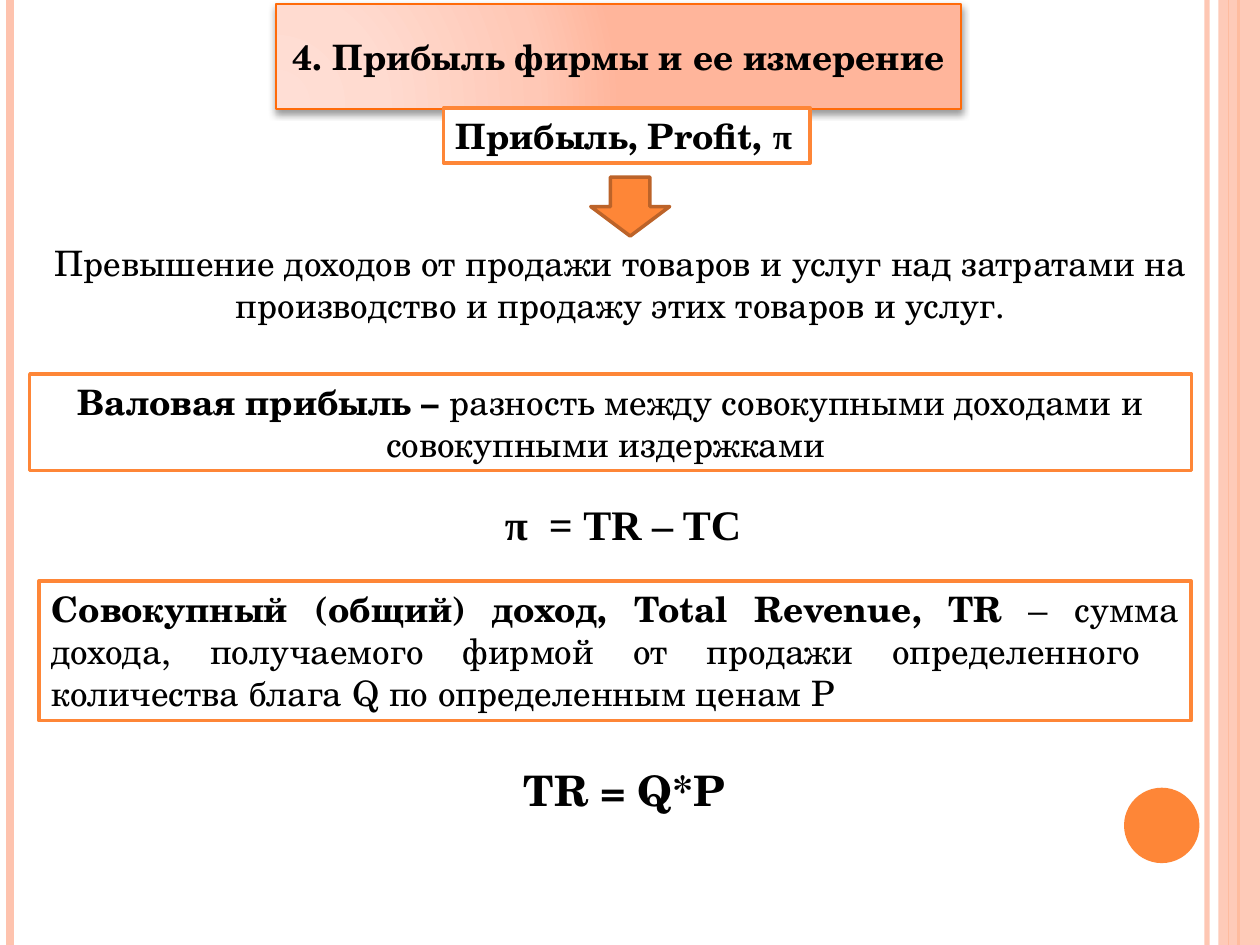
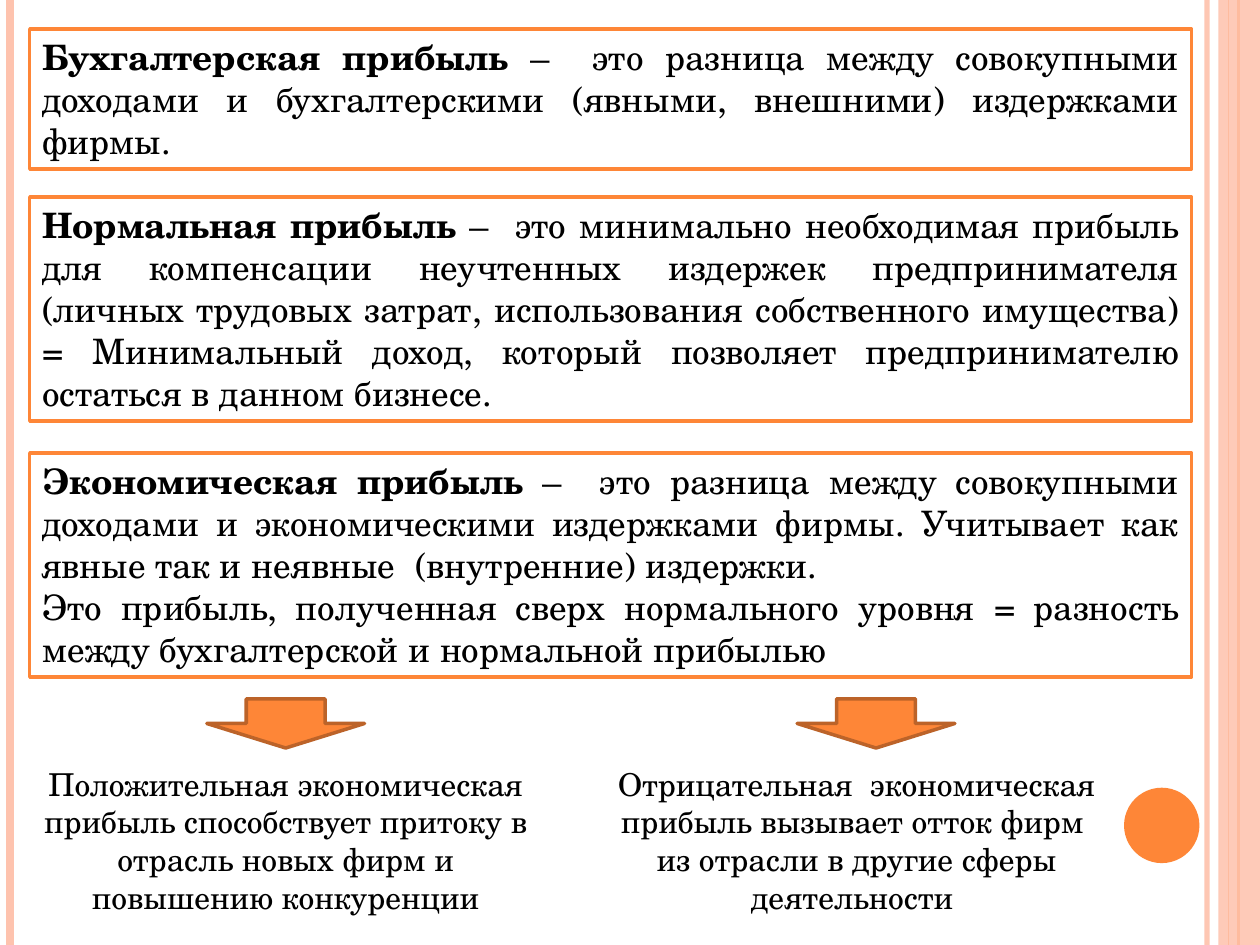
from pptx import Presentation
from pptx.dml.color import RGBColor
from pptx.enum.shapes import MSO_CONNECTOR as Link, MSO_SHAPE as Kind
from pptx.enum.text import MSO_ANCHOR as Anchor, MSO_AUTO_SIZE as Fit, PP_ALIGN as Align
from pptx.oxml import parse_xml
from pptx.oxml.ns import nsdecls, qn
from pptx.util import Cm, Pt

WIDE, HIGH = 25.4, 19.05
EDGE, SPAN = 0.6, 23.42
ORANGE, PINK, BROWN = "FE8637", "FEC3AE", "BC6329"
WHITE, BLACK, RIM = "FFFFFF", "000000", "FF6B0A"
SERIF, TIMES = "TeX Gyre Schola", "Times New Roman"
TITLE_ONLY, BLANK = 5, 6

# x, colour, width in points, opacity in percent
RULES = [
    (24.33, PINK, 3, 93),
    (0.2, PINK, 4.5, 100),
    (24.97, ORANGE, 1.5, 100),
    (24.77, ORANGE, 0.75, 100),
]
STOPS = [(0, "FFDED5"), (30, "FFDBD0"), (75, "FFC8B6"), (100, "FFB59B")]


def color(code):
    return RGBColor.from_string(code)


def paint(shape, fill, line=None, width=2):
    shape.fill.solid()
    shape.fill.fore_color.rgb = color(fill)
    if line:
        outline(shape, line, width)
    else:
        shape.line.fill.background()


def outline(shape, code, width):
    shape.line.color.rgb = color(code)
    shape.line.width = Pt(width)


def fade(shape, percent):
    """Make the first solid colour of a shape partly transparent."""
    tint = shape._element.spPr.find(".//" + qn("a:srgbClr"))
    tint.append(parse_xml(f'<a:alpha {nsdecls("a")} val="{percent * 1000}"/>'))


def form(slide, kind, place, fill, line=None):
    shape = slide.shapes.add_shape(kind, *map(Cm, place))
    shape.shadow.inherit = False
    paint(shape, fill, line)
    return shape


def rule(slide, x, code, width, opaque):
    line = slide.shapes.add_connector(Link.STRAIGHT, Cm(x), 0, Cm(x), Cm(HIGH))
    outline(line, code, width)
    if opaque < 100:
        fade(line, opaque)
    line._element.spPr.append(parse_xml(f'<a:effectLst {nsdecls("a")}/>'))


def frame(slide):
    """Draw the side bands and the disc that every slide has."""
    for item in RULES:
        rule(slide, *item)
    fade(form(slide, Kind.RECTANGLE, (24.56, 0, 0.84, HIGH), PINK), 87)
    form(slide, Kind.OVAL, (22.66, 15.88, 1.52, 1.52), ORANGE)


def write(shape, paras, align, size=20, wrap=True, anchor=Anchor.TOP):
    """Fill a shape with paragraphs, each a list of (text, bold[, font])."""
    body = shape.text_frame
    look = {"word_wrap": wrap, "auto_size": Fit.SHAPE_TO_FIT_TEXT, "vertical_anchor": anchor}
    for name, value in look.items():
        setattr(body, name, value)
    for i, runs in enumerate(paras):
        para = body.add_paragraph() if i else body.paragraphs[0]
        para.alignment = align
        for text, bold, *face in runs:
            run = para.add_run()
            run.text = text
            style = {"name": face[0] if face else SERIF, "size": Pt(size), "bold": bold}
            for name, value in style.items():
                setattr(run.font, name, value)
            run.font.color.rgb = color(BLACK)


def head(slide, text):
    title = slide.shapes.title
    spot = {"left": 5.56, "top": 0.59, "width": 13.82, "height": 1.11}
    for name, value in spot.items():
        setattr(title, name, Cm(value))
    stops = "".join(f'<a:gs pos="{at * 1000}"><a:srgbClr val="{code}"/></a:gs>' for at, code in STOPS)
    props = title._element.spPr
    props.append(parse_xml(
        f'<a:gradFill {nsdecls("a")} rotWithShape="1"><a:gsLst>{stops}</a:gsLst><a:path path="circle">'
        '<a:fillToRect l="5000" t="100000" r="120000" b="10000"/></a:path></a:gradFill>'))
    outline(title, RIM, 1)
    props.append(parse_xml(
        f'<a:effectLst {nsdecls("a")}><a:outerShdw blurRad="{Pt(4)}" dist="{Pt(2)}" dir="5400000" '
        f'rotWithShape="0"><a:srgbClr val="{BLACK}"><a:alpha val="40000"/></a:srgbClr>'
        '</a:outerShdw></a:effectLst>'))
    write(title, [[(text, True)]], Align.CENTER, wrap=False, anchor=Anchor.MIDDLE)


def box(slide, place, paras, align=Align.JUSTIFY, **look):
    write(form(slide, Kind.RECTANGLE, place, WHITE, ORANGE), paras, align, **look)


def note(slide, place, runs, align=Align.CENTER, **look):
    write(slide.shapes.add_textbox(*map(Cm, place)), [runs], align, **look)


def arrow(slide, *place):
    form(slide, Kind.DOWN_ARROW, place, ORANGE, BROWN)


def measure(slide):
    head(slide, "4. Прибыль фирмы и ее измерение")
    box(slide, (8.94, 2.18, 7.39, 1.11), [[("Прибыль, Profit, ", True), ("π", True, TIMES)]],
        Align.LEFT, wrap=False)
    arrow(slide, 11.91, 3.57, 1.59, 1.19)
    note(slide, (EDGE, 4.75, 23.82, 1.95), [(
        "Превышение доходов от продажи товаров и услуг над затратами на "
        "производство и продажу этих товаров и услуг.", False)])
    box(slide, (EDGE, 7.54, SPAN, 1.95), [[
        ("Валовая прибыль – ", True),
        ("разность между совокупными доходами и совокупными издержками ", False)]], Align.CENTER)
    note(slide, (9.93, 9.93, 5.51, 1.27), [("π  = TR – TC", True, TIMES)],
         Align.LEFT, size=24, wrap=False)
    box(slide, (0.79, 11.71, 23.22, 2.82), [[
        ("Совокупный (общий) доход, Total Revenue, TR ", True),
        ("– сумма дохода, получаемого фирмой от продажи определенного  "
         "количества блага Q по определенным ценам Р", False)]])
    note(slide, (10.31, 15.29, 4.62, 1.27), [("TR = Q*P", True)], Align.LEFT, size=24, wrap=False)


def types(slide):
    kinds = [
        (0.59, 2.82, "Бухгалтерская прибыль ", [
            "–  это разница между совокупными доходами и бухгалтерскими "
            "(явными, внешними) издержками фирмы. "]),
        (3.97, 4.52, "Нормальная прибыль ", [
            "–  это минимально необходимая прибыль для компенсации неучтенных издержек "
            "предпринимателя (личных трудовых затрат, использования собственного имущества) "
            "= Минимальный доход, который позволяет предпринимателю остаться в данном бизнесе. "]),
        (9.13, 4.52, "Экономическая прибыль ", [
            "–  это разница между совокупными доходами и экономическими издержками фирмы. "
            "Учитывает как явные так и неявные  (внутренние) издержки. ",
            "Это прибыль, полученная сверх нормального уровня = разность между "
            "бухгалтерской и нормальной прибылью "]),
    ]
    for top, high, term, (first, *rest) in kinds:
        paras = [[(term, True), (first, False)]] + [[(text, False)] for text in rest]
        box(slide, (EDGE, top, SPAN, high), paras)

    effects = [
        (4.17, 0.4, "Положительная экономическая прибыль способствует притоку в отрасль "
                    "новых фирм и повышению конкуренции"),
        (16.07, 11.91, "Отрицательная  экономическая прибыль вызывает отток фирм  из отрасли "
                       "в другие сферы деятельности "),
    ]
    for tip, left, text in effects:
        arrow(slide, tip, 14.09, 3.18, 0.99)
        note(slide, (left, 15.29, 10.72, 3.33), [(text, False)], size=18)


def main():
    deck = Presentation()
    deck.slide_width, deck.slide_height = Cm(WIDE), Cm(HIGH)
    for layout, fill in [(TITLE_ONLY, measure), (BLANK, types)]:
        slide = deck.slides.add_slide(deck.slide_layouts[layout])
        frame(slide)
        fill(slide)
    deck.save("out.pptx")


if __name__ == "__main__":
    main()
